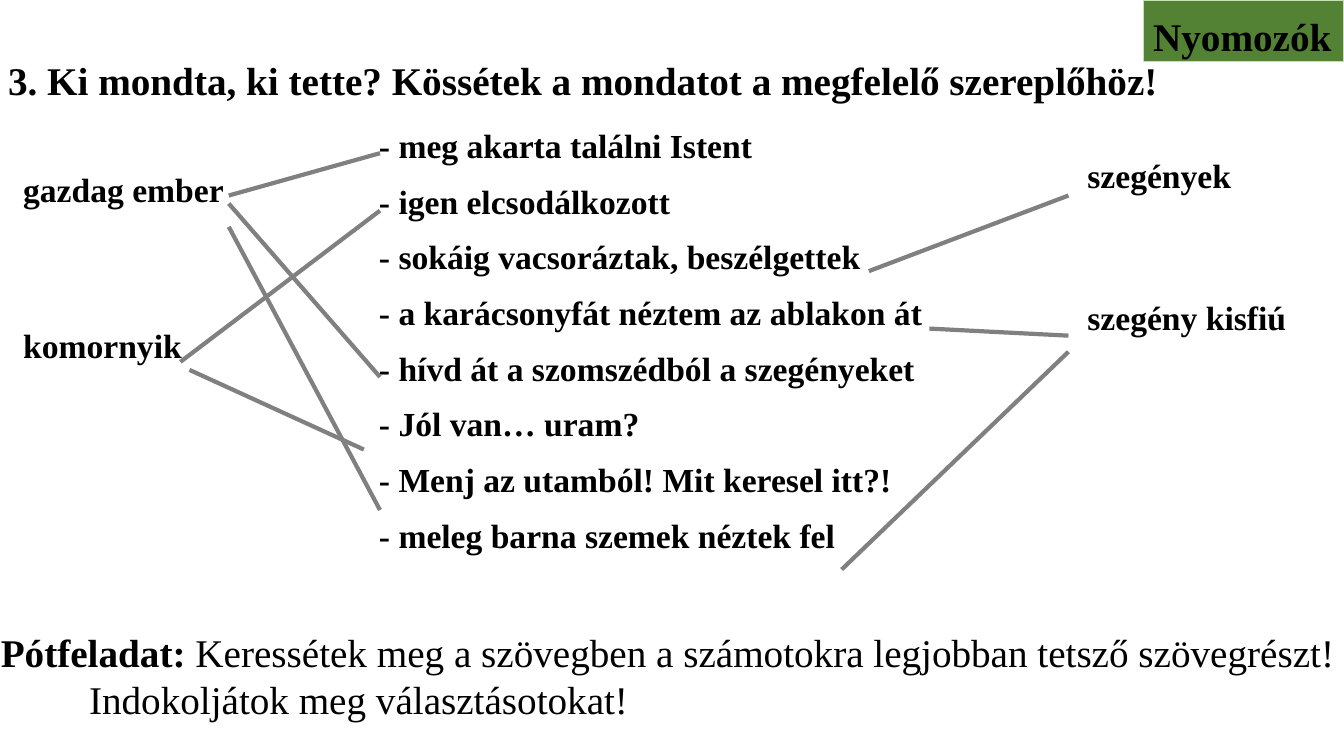
"""Build the matching exercise slide on a grid of 160 columns by 90 rows."""
from pptx import Presentation
from pptx.dml.color import RGBColor
from pptx.enum.shapes import MSO_CONNECTOR as Connector, MSO_SHAPE as Shape
from pptx.enum.text import MSO_ANCHOR as Anchor, MSO_AUTO_SIZE as AutoSize, PP_ALIGN as Align
from pptx.oxml.ns import qn
from pptx.util import Inches, Pt

COLORS = {"text": "000000", "badge": "548235", "badge_line": "C5E0B4", "link": "808080"}
FONT = "Times New Roman"
COLUMNS, ROWS = 160, 90
SLIDE_HEIGHT = Inches(7.5)
INSET = 1.2

QUOTES = [
    "- meg akarta találni Istent",
    "- igen elcsodálkozott",
    "- sokáig vacsoráztak, beszélgettek",
    "- a karácsonyfát néztem az ablakon át",
    "- hívd át a szomszédból a szegényeket",
    "- Jól van… uram?",
    "- Menj az utamból! Mit keresel itt?!",
    "- meleg barna szemek néztek fel",
]
MATCH_COLUMNS = [
    {"width": 28.3, "left": 0.84, "top": 6.76, "gap": 81, "spacing": 1.15,
     "lines": ["gazdag ember", "komornyik"]},
    {"width": 92.4, "left": 14.9, "top": 0, "gap": 0, "spacing": 1.5, "lines": QUOTES},
    {"width": 35.8, "left": 6.84, "top": 5.09, "gap": 71, "spacing": 1.15,
     "lines": ["szegények", "szegény kisfiú"]},
]
RICH_MAN, QUOTE_START, POOR = 27.24, 45.24, 127.2
LINKS = [
    (21.48, 43.08, QUOTE_START, 25.08),
    (RICH_MAN, 23.28, QUOTE_START, 18.24),
    (RICH_MAN, 24.24, QUOTE_START, 44.88),
    (RICH_MAN, 27, QUOTE_START, 60.72),
    (103.44, 32.28, POOR, 23.28),
    (22.56, 44.04, 43.32, 53.52),
    (110.64, 39.12, POOR, 39.96),
    (100.2, 67.8, POOR, 41.88),
]


def grid(*counts):
    """Turn counts of grid squares into lengths."""
    return [round(count * SLIDE_HEIGHT / ROWS) for count in counts]


def color(name):
    """Look up a named colour."""
    return RGBColor.from_string(COLORS[name])


def style(paragraph, size, bold=True, spacing=1.0, before=0):
    """Format one left-aligned paragraph."""
    paragraph.alignment = Align.LEFT
    paragraph.line_spacing = spacing
    paragraph.space_before = Pt(before)
    font = paragraph.font
    font.name, font.size, font.bold = FONT, Pt(size), bold
    font.color.rgb = color("text")


def set_frame(frame, wrap=True, left=INSET):
    """Anchor a text frame at the top with a chosen left margin."""
    frame.word_wrap = wrap
    frame.auto_size = AutoSize.NONE
    frame.vertical_anchor = Anchor.TOP
    frame.margin_left, frame.margin_right = grid(left, INSET)
    frame.margin_top, frame.margin_bottom = grid(INSET / 2, INSET / 2)


def add_badge(slide, text, *box):
    """Add the green team label."""
    badge = slide.shapes.add_shape(Shape.RECTANGLE, *grid(*box))
    badge.shadow.inherit = False
    badge.fill.solid()
    badge.fill.fore_color.rgb = color("badge")
    badge.line.color.rgb = color("badge_line")
    badge.line.width = Pt(0.75)
    set_frame(badge.text_frame, wrap=False)
    badge.text_frame.text = text
    style(badge.text_frame.paragraphs[0], 28, spacing=1.15)


def set_title(slide, text, *box):
    """Place and format the title placeholder."""
    title = slide.shapes.title
    title.left, title.top, title.width, title.height = grid(*box)
    set_frame(title.text_frame, left=2 * INSET)
    title.text_frame.text = text
    style(title.text_frame.paragraphs[0], 28, spacing=1.15)


def fill_cell(cell, column):
    """Write one list of the matching table."""
    cell.fill.background()
    cell.margin_left, cell.margin_top = grid(column["left"], column["top"])
    cell.margin_right = cell.margin_bottom = 0
    frame = cell.text_frame
    frame.text = "\n".join(column["lines"])
    for index, paragraph in enumerate(frame.paragraphs):
        style(paragraph, 24, spacing=column["spacing"], before=column["gap"] if index else 0)


def add_match_table(slide, left, top, height):
    """Add the table of characters and sentences."""
    width = sum(column["width"] for column in MATCH_COLUMNS)
    box = grid(left, top, width, height)
    table = slide.shapes.add_table(1, len(MATCH_COLUMNS), *box).table
    for index, column in enumerate(MATCH_COLUMNS):
        table.columns[index].width = grid(column["width"])[0]
        fill_cell(table.cell(0, index), column)


def add_extra_task(slide, label, text, hanging, *box):
    """Add the extra task with a bold label and a hanging indent."""
    frame = slide.shapes.add_textbox(*grid(*box)).text_frame
    set_frame(frame)
    paragraph = frame.paragraphs[0]
    properties = paragraph._p.get_or_add_pPr()
    indent = grid(hanging)[0]
    properties.set("marL", str(indent))
    properties.set("indent", str(-indent))
    style(paragraph, 28, bold=False)
    for content, bold in ((label, True), (text, False)):
        run = paragraph.add_run()
        run.text = content
        run.font.bold = bold


def add_link(slide, *ends):
    """Draw a grey line between a character and a sentence."""
    link = slide.shapes.add_connector(Connector.STRAIGHT, *grid(*ends))
    link.line.color.rgb = color("link")
    link.line.width = Pt(3)
    properties = link._element.spPr
    properties.append(properties.makeelement(qn("a:effectLst"), {}))


def main():
    """Build and save the slide."""
    presentation = Presentation()
    presentation.slide_width, presentation.slide_height = grid(COLUMNS, ROWS)
    slide = presentation.slides.add_slide(presentation.slide_layouts.get_by_name("Title Only"))
    add_badge(slide, "Nyomozók", 136.1, 0, 23.9, 7.3)
    set_title(slide, "3. Ki mondta, ki tette? Kössétek a mondatot a megfelelő szereplőhöz!",
              -1.44, 5.28, 144.72, 7.68)
    add_match_table(slide, 1.92, 13.08, 57.6)
    add_extra_task(slide, "Pótfeladat: ",
                   "Keressétek meg a szövegben a számotokra legjobban tetsző szövegrészt! "
                   "Indokoljátok meg választásotokat!",
                   10.5, -1.08, 74.16, 162.6, 12.48)
    for link in LINKS:
        add_link(slide, *link)
    presentation.save("out.pptx")


if __name__ == "__main__":
    main()
